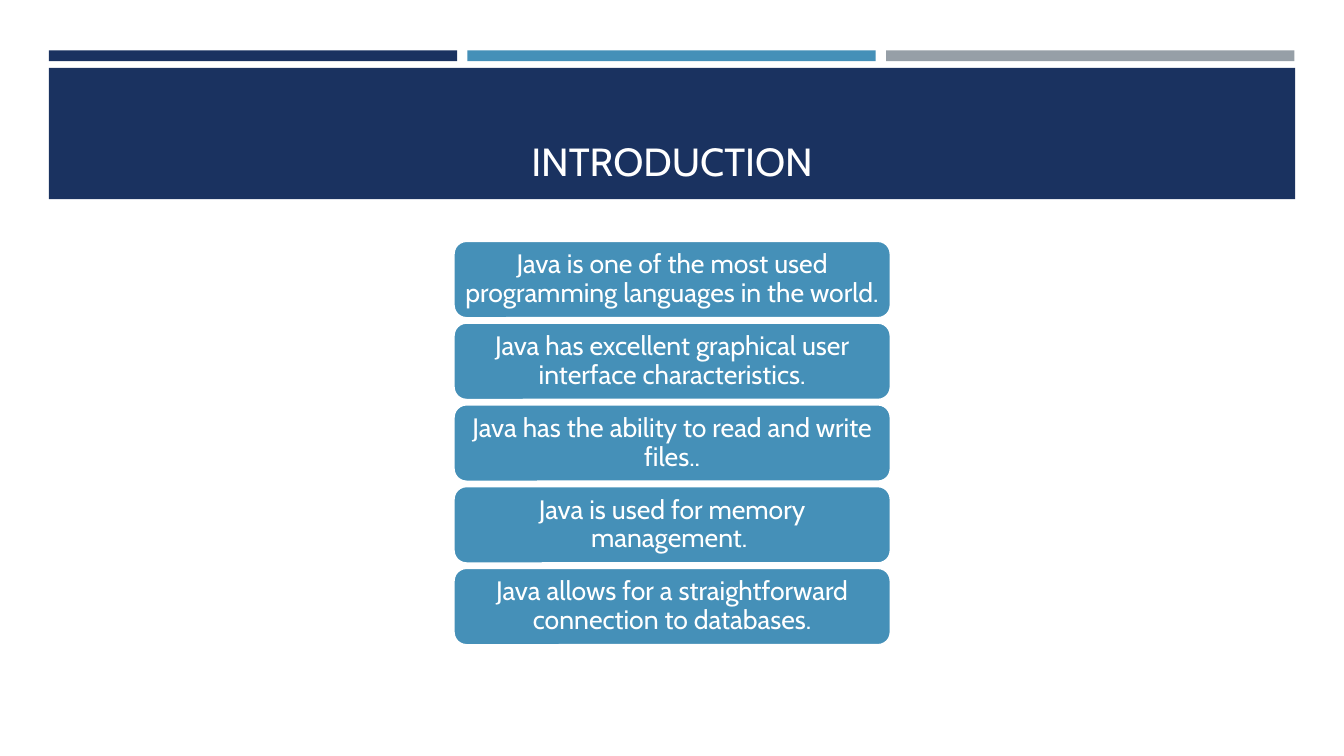
"""Build the Introduction slide: a banded title above five stacked statements about Java."""
from pptx import Presentation
from pptx import util as u
from pptx.dml.color import RGBColor
from pptx.enum import shapes, text

COLORS = {"navy": "1A3260", "blue": "4590B8", "gray": "969FA7", "white": "FFFFFF"}
FONT = "Cabin"
STATEMENTS = [
    "Java is one of the most used programming languages in the world.",
    "Java has excellent graphical user interface characteristics.",
    "Java has the ability to read and write files..",
    "Java is used for memory management. ",
    "Java allows for a straightforward connection to databases.",
]


def color(name):
    return RGBColor.from_string(COLORS[name])


def add_block(slide, kind, left, top, width, height, fill, line=None):
    shape = slide.shapes.add_shape(kind, u.Cm(left), u.Cm(top), u.Cm(width), u.Cm(height))
    shape.shadow.inherit = False
    shape.fill.solid()
    shape.fill.fore_color.rgb = color(fill)
    if line:
        shape.line.color.rgb = color(line)
        shape.line.width = u.Pt(1.75)
    else:
        shape.line.fill.background()
    return shape


def write_text(shape, content, size, anchor, inset_x, inset_y, spacing=1.0):
    frame = shape.text_frame
    frame.word_wrap = True
    frame.vertical_anchor = anchor
    frame.margin_left = frame.margin_right = u.Cm(inset_x)
    frame.margin_top = frame.margin_bottom = u.Cm(inset_y)
    paragraph = frame.paragraphs[0]
    paragraph.alignment = text.PP_ALIGN.CENTER
    paragraph.line_spacing = spacing
    run = paragraph.add_run()
    run.text = content
    run.font.name = FONT
    run.font.size = u.Pt(size)
    run.font.color.rgb = color("white")


def add_header(slide, title):
    rectangle = shapes.MSO_SHAPE.RECTANGLE
    for index, fill in enumerate(("navy", "blue", "gray")):
        add_block(slide, rectangle, 1.23 + index * 10.55, 1.27, 10.29, 0.27, fill)
    add_block(slide, rectangle, 1.23, 1.71, 31.41, 3.31, "navy")
    title_box = slide.shapes.add_textbox(u.Cm(1.62), u.Cm(1.96), u.Cm(30.63), u.Cm(2.82))
    write_text(title_box, title, 28, text.MSO_ANCHOR.BOTTOM, 0.25, 0.13)


def add_statements(slide, statements):
    for index, statement in enumerate(statements):
        card = add_block(slide, shapes.MSO_SHAPE.ROUNDED_RECTANGLE,
                         11.43, 6.07 + index * 2.06, 11.02, 1.95, "blue", line="white")
        write_text(card, statement, 19, text.MSO_ANCHOR.MIDDLE, 0.2, 0.1, spacing=0.9)


def main():
    presentation = Presentation()
    presentation.slide_width = u.Cm(33.87)
    presentation.slide_height = u.Cm(19.05)
    slide = presentation.slides.add_slide(presentation.slide_layouts[6])
    add_header(slide, "INTRODUCTION")
    add_statements(slide, STATEMENTS)
    presentation.save("out.pptx")


if __name__ == "__main__":
    main()
